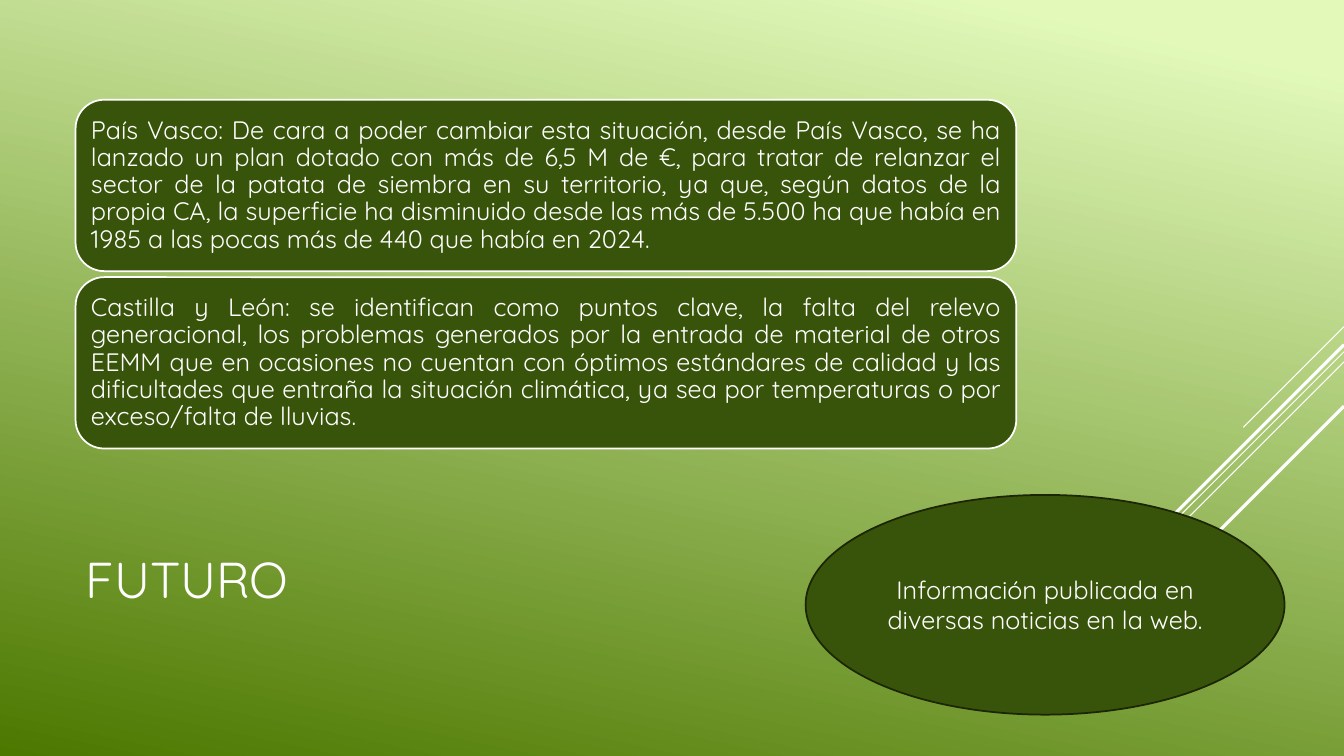
from dataclasses import dataclass

import pptx
import pptx.dml.color
import pptx.enum.shapes
import pptx.enum.text
import pptx.oxml
import pptx.oxml.ns
import pptx.util

Inches = pptx.util.Inches
Pt = pptx.util.Pt
SHAPE = pptx.enum.shapes.MSO_SHAPE
ALIGN = pptx.enum.text.PP_ALIGN
MIDDLE = pptx.enum.text.MSO_ANCHOR.MIDDLE

FONT = "Quicksand"
WHITE = "FFFFFF"
GREEN = "38540A"
DARK = "1C2504"
SLIDE_W = 13.33


@dataclass
class Ray:
    top: float
    run: float
    weight: float


@dataclass
class Panel:
    kind: int
    left: float
    top: float
    width: float
    height: float
    line: str
    inset: float
    align: int
    spacing: float
    text: str


RAYS = [
    Ray(3.24, 1.0, 0.75),
    Ray(3.49, 3.26, 0.75),
    Ray(3.59, 2.07, 0.75),
    Ray(3.42, 1.91, 2.25),
    Ray(4.03, 1.39, 2.25),
]

REGIONS = [
    "País Vasco: De cara a poder cambiar esta situación, desde País Vasco, se ha "
    "lanzado un plan dotado con más de 6,5 M de €, para tratar de relanzar el sector "
    "de la patata de siembra en su territorio, ya que, según datos de la propia CA, "
    "la superficie ha disminuido desde las más de 5.500 ha que había en 1985 a las "
    "pocas más de 440 que había en 2024.",
    "Castilla y León: se identifican como puntos clave, la falta del relevo "
    "generacional, los problemas generados por la entrada de material de otros EEMM "
    "que en ocasiones no cuentan con óptimos estándares de calidad y las dificultades "
    "que entraña la situación climática, ya sea por temperaturas o por exceso/falta "
    "de lluvias.",
]

PANELS = [
    Panel(SHAPE.ROUNDED_RECTANGLE, 0.75, 0.99 + 1.76 * i, 9.33, 1.7, WHITE, 0.07,
          ALIGN.JUSTIFY, 0.9, text)
    for i, text in enumerate(REGIONS)
] + [
    Panel(SHAPE.OVAL, 7.99, 4.91, 4.75, 2.18, DARK, 0.1, ALIGN.CENTER, 1.0,
          "Información publicada en diversas noticias en la web."),
]


def rgb(value: str) -> pptx.dml.color.RGBColor:
    return pptx.dml.color.RGBColor.from_string(value)


def apply(target: object, values: dict) -> None:
    for name, value in values.items():
        setattr(target, name, value)


def write(sp, text: str, size: float, align: int, spacing: float, inset: float) -> None:
    tf = sp.text_frame
    apply(tf, {
        "word_wrap": True,
        "auto_size": pptx.enum.text.MSO_AUTO_SIZE.NONE,
        "vertical_anchor": MIDDLE,
        "margin_left": Inches(inset),
        "margin_right": Inches(inset),
        "margin_top": Inches(min(inset, 0.07)),
        "margin_bottom": Inches(min(inset, 0.07)),
    })
    p = tf.paragraphs[0]
    apply(p, {"alignment": align, "line_spacing": spacing})
    r = p.add_run()
    r.text = text
    apply(r.font, {"name": FONT, "size": Pt(size)})
    r.font.color.rgb = rgb(WHITE)


def paint_background(s) -> None:
    fill = s.background.fill
    fill.gradient()
    fill.gradient_angle = 360 - 102
    for stop, (position, color) in zip(fill.gradient_stops,
                                       [(0.07, "E2F9BA"), (1.0, "4C7800")]):
        stop.position = position
        stop.color.rgb = rgb(color)


def draw_ray(s, ray: Ray) -> None:
    sp = s.shapes.add_connector(
        pptx.enum.shapes.MSO_CONNECTOR.STRAIGHT,
        Inches(SLIDE_W), Inches(ray.top),
        Inches(SLIDE_W - ray.run), Inches(ray.top + ray.run))
    sp.line.color.rgb = rgb(WHITE)
    sp.line.width = Pt(ray.weight)
    sp_pr = sp._element.spPr
    sp_pr.append(sp_pr.makeelement(pptx.oxml.ns.qn("a:effectLst"), {}))


def draw_panel(s, panel: Panel) -> None:
    sp = s.shapes.add_shape(panel.kind, Inches(panel.left), Inches(panel.top),
                            Inches(panel.width), Inches(panel.height))
    sp.shadow.inherit = False
    sp.fill.solid()
    sp.fill.fore_color.rgb = rgb(GREEN)
    sp.line.color.rgb = rgb(panel.line)
    sp.line.width = Pt(1.25)
    write(sp, panel.text, 18, panel.align, panel.spacing, panel.inset)


def main() -> None:
    prs = pptx.Presentation()
    apply(prs, {"slide_width": Inches(SLIDE_W), "slide_height": Inches(7.5)})
    s = prs.slides.add_slide(prs.slide_layouts[5])
    paint_background(s)
    for ray in RAYS:
        draw_ray(s, ray)
    title = s.shapes.title
    apply(title, {"left": Inches(0.75), "top": Inches(4.91),
                  "width": Inches(9.33), "height": Inches(1.65)})
    write(title, "FUTURO", 36, ALIGN.LEFT, 1.0, 0.1)
    for panel in PANELS:
        draw_panel(s, panel)
    prs.save("out.pptx")


if __name__ == "__main__":
    main()
